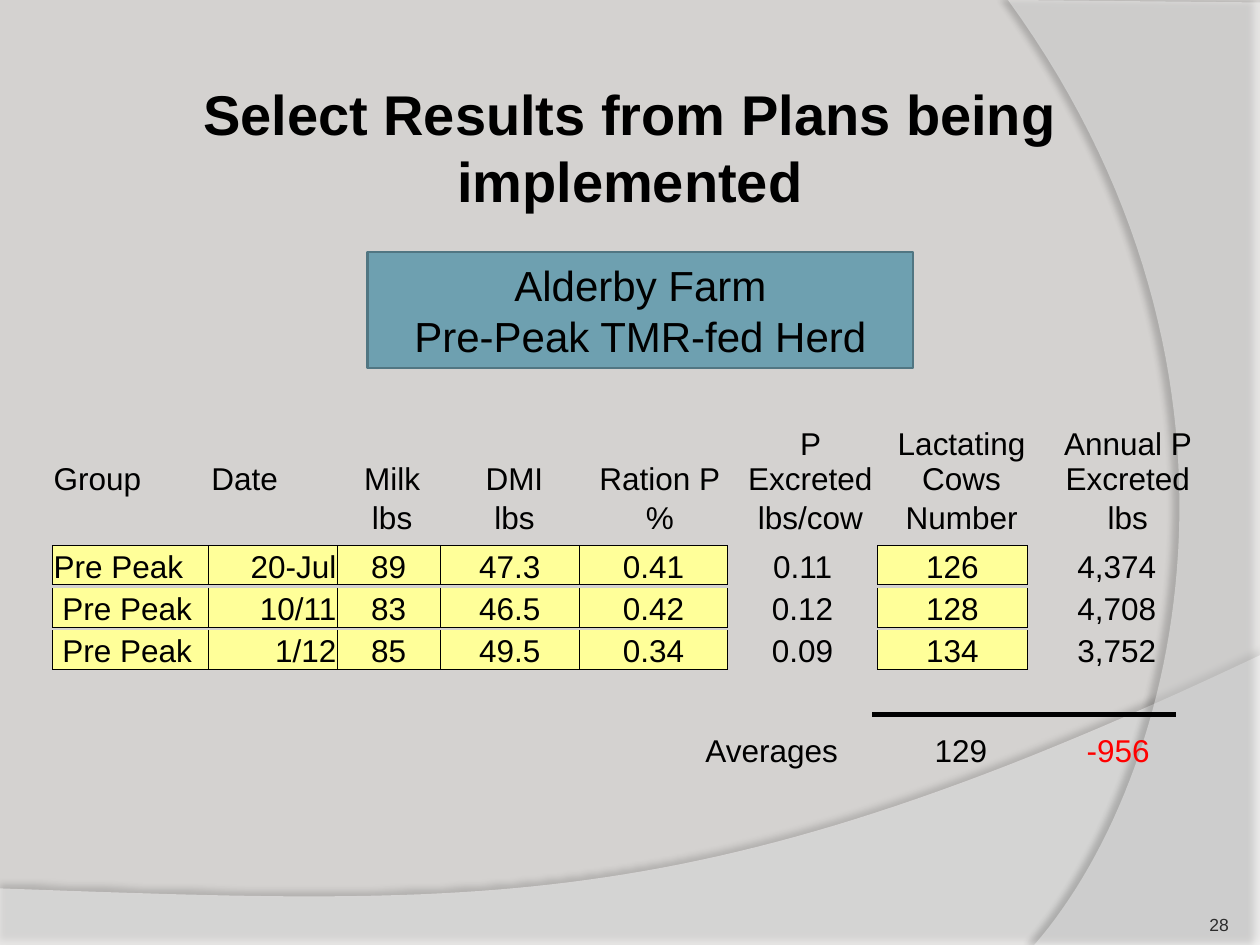
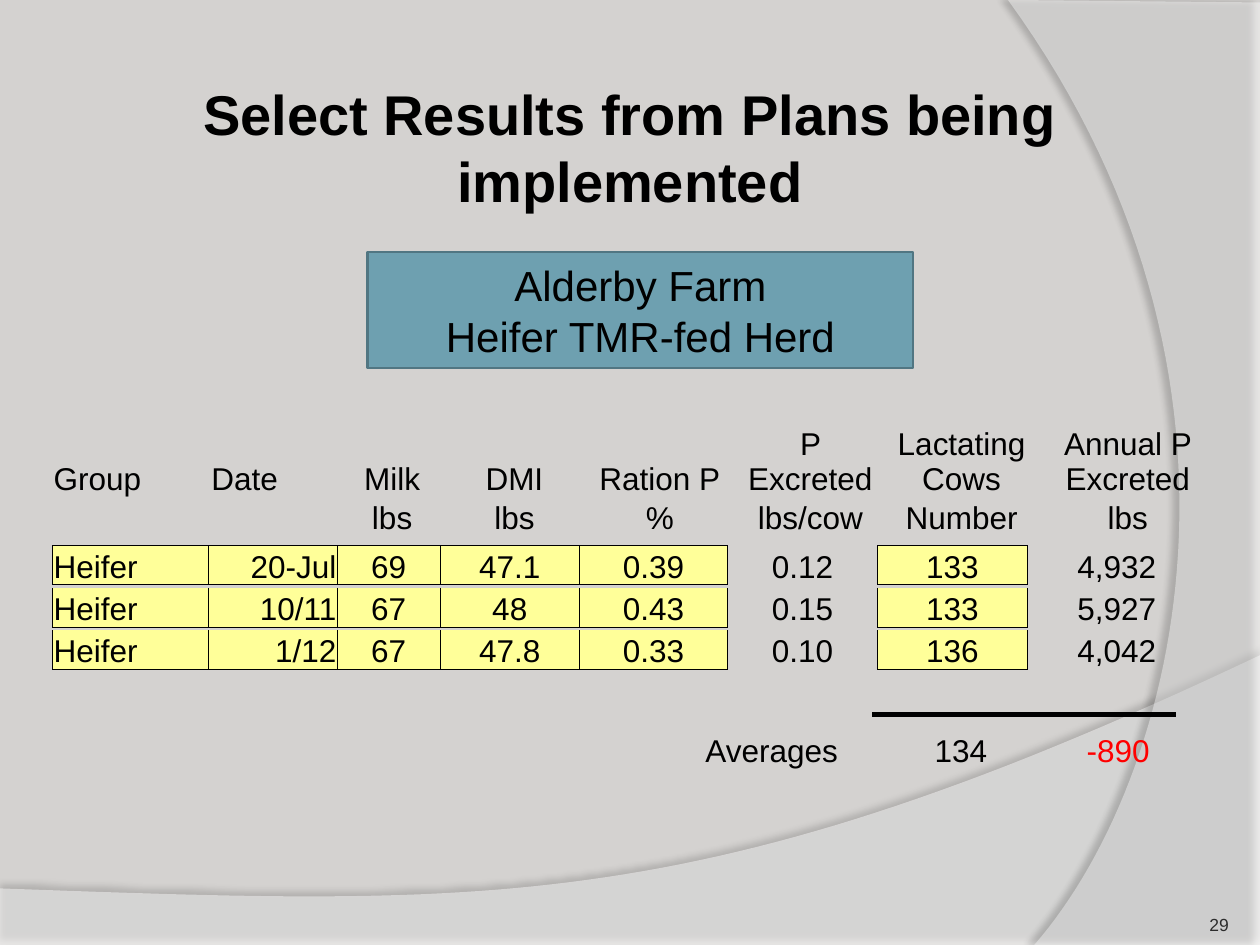
from lxml import etree
from pptx import Presentation
from pptx.dml.color import RGBColor
from pptx.enum.shapes import MSO_CONNECTOR, MSO_SHAPE
from pptx.enum.text import MSO_ANCHOR, PP_ALIGN
from pptx.oxml.ns import qn
from pptx.util import Cm, Pt

LEFT, CENTER, RIGHT = PP_ALIGN.LEFT, PP_ALIGN.CENTER, PP_ALIGN.RIGHT
BOTTOM, MIDDLE = MSO_ANCHOR.BOTTOM, MSO_ANCHOR.MIDDLE
RECT, STRAIGHT = MSO_SHAPE.RECTANGLE, MSO_CONNECTOR.STRAIGHT

BACKGROUND = RGBColor(0xD4, 0xD2, 0xD0)
WHITE = RGBColor(0xFF, 0xFF, 0xFF)
BLACK = RGBColor(0, 0, 0)
RED = RGBColor(0xFF, 0, 0)
GRAY = RGBColor(0x2C, 0x2C, 0x2C)
TEAL = RGBColor(0x6E, 0xA0, 0xB0)
DARK_TEAL = RGBColor(0x51, 0x76, 0x82)
YELLOW = RGBColor(0xFF, 0xFF, 0x99)
FONT = "Arial"

TITLE = "Select Results from Plans being implemented"
FARM = "Alderby Farm"
HEADER = [
    ["Group", "Date", "Milk", "DMI", "Ration P", "P Excreted",
     "Lactating Cows", "Annual P Excreted"],
    ["", "", "lbs", "lbs", "%", "lbs/cow", "Number", "lbs"],
]
HEADER_ALIGN = [LEFT, LEFT] + [CENTER] * 6
BODY_ALIGN = [LEFT, RIGHT] + [CENTER] * 6
COLUMN_WIDTHS = [3.18, 2.62, 2.09, 2.84, 3.02, 3.05, 3.05, 3.65]
CALCULATED = (5, 7)  # columns without a yellow box
BODY_TOP, BODY_PITCH = 11, 0.85

HERDS = [
    {"number": "28", "herd": "Pre-Peak TMR-fed Herd", "cows": "129", "change": "-956",
     "rows": [
         ["Pre Peak", "20-Jul", "89", "47.3", "0.41", "0.11", "126", "4,374"],
         [" Pre Peak", "10/11", "83", "46.5", "0.42", "0.12", "128", "4,708"],
         [" Pre Peak", "1/12", "85", "49.5", "0.34", "0.09", "134", "3,752"]]},
    {"number": "29", "herd": "Heifer TMR-fed Herd", "cows": "134", "change": "-890",
     "rows": [
         ["Heifer", "20-Jul", "69", "47.1", "0.39", "0.12", "133", "4,932"],
         ["Heifer", "10/11", "67", "48", "0.43", "0.15", "133", "5,927"],
         ["Heifer", "1/12", "67", "47.8", "0.33", "0.10", "136", "4,042"]]},
]

# corners, Bezier controls, end of curve, opacity, shadow opacity, distance, direction
BANDS = [
    ([(0, 17.91), (0, 19.05), (25.4, 19.05), (25.4, 13.21)],
     [(14.2, 18.52), (9.93, 18.26), (0, 17.91)], 45, 35, 3.5, 270),
    ([(25.4, 0.05), (25.4, 19.05), (20.85, 19.05)],
     [(23.75, 15.72), (25.86, 7.62), (20.32, 0)], 40, 45, 4, 180),
]
CURVE_STEPS = 60


def write_text(tf, lines, size, align=LEFT, color=BLACK, bold=False):
    tf.word_wrap = True
    for i, line in enumerate(lines):
        p = tf.paragraphs[0] if i == 0 else tf.add_paragraph()
        p.alignment = align
        p.font.size = Pt(size)
        if line:
            r = p.add_run()
            r.text = line
            r.font.name = FONT
            r.font.size = Pt(size)
            r.font.bold = bold
            r.font.color.rgb = color


def add_band(slide, z, corners, curve, opacity, shadow_opacity, distance, direction):
    """Add a translucent curved band with a soft shadow, behind the content."""
    bezier = [corners[-1]] + curve
    points = list(corners)
    for step in range(1, CURVE_STEPS + 1):
        t = step / CURVE_STEPS
        weights = ((1 - t) ** 3, 3 * t * (1 - t) ** 2, 3 * t * t * (1 - t), t ** 3)
        points.append([sum(w * pt[axis] for w, pt in zip(weights, bezier))
                       for axis in (0, 1)])
    emu = [(Cm(x), Cm(y)) for x, y in points]
    builder = slide.shapes.build_freeform(*emu[0])
    builder.add_line_segments(emu[1:], close=True)
    sp = builder.convert_to_shape()
    sp.fill.solid()
    sp.fill.fore_color.rgb = WHITE
    sp.line.fill.background()
    sp.shadow.inherit = False
    sp_pr = sp.element.spPr
    color = sp_pr.find(qn("a:solidFill"))[0]
    etree.SubElement(color, qn("a:alpha"), val=str(opacity * 1000))
    shadow = etree.SubElement(
        sp_pr.find(qn("a:effectLst")), qn("a:outerShdw"), blurRad=str(Pt(4)),
        dist=str(Pt(distance)), dir=str(direction * 60000), algn="ctr", rotWithShape="0")
    color = etree.SubElement(shadow, qn("a:srgbClr"), val=str(BLACK))
    etree.SubElement(color, qn("a:alpha"), val=str(shadow_opacity * 1000))
    slide.shapes.element.insert(z, sp.element)


prs = Presentation()
prs.slide_width, prs.slide_height = Cm(25.4), Cm(19.05)
fill = prs.slide_master.background.fill
fill.solid()
fill.fore_color.rgb = BACKGROUND

for herd in HERDS:
    slide = prs.slides.add_slide(prs.slide_layouts[5])
    for z, band in enumerate(BANDS, start=2):
        add_band(slide, z, *band)

    title = slide.shapes.title
    title.left, title.top, title.width, title.height = Cm(0.85), Cm(1.46), Cm(23.7), Cm(3)
    title.text_frame.vertical_anchor = MIDDLE
    write_text(title.text_frame, [TITLE], 32, CENTER, bold=True)

    sp = slide.shapes.add_shape(RECT, Cm(7.41), Cm(5.08), Cm(11), Cm(2.34))
    sp.shadow.inherit = False
    sp.fill.solid()
    sp.fill.fore_color.rgb = TEAL
    sp.line.color.rgb = DARK_TEAL
    sp.line.width = Pt(1.5)
    sp.text_frame.vertical_anchor = MIDDLE
    write_text(sp.text_frame, [FARM, herd["herd"]], 24, CENTER)

    # One table for the header, then one for each dated row
    tables = [(HEADER, 8.46, [1.56, 0.78], 1, HEADER_ALIGN)]
    for i, row in enumerate(herd["rows"]):
        tables.append(([row], BODY_TOP + i * BODY_PITCH, [0.79], 0.99, BODY_ALIGN))

    for t, (rows, top, heights, scale, aligns) in enumerate(tables):
        is_body = t > 0
        widths = [Cm(w * scale) for w in COLUMN_WIDTHS]
        table = slide.shapes.add_table(len(rows), len(widths), Cm(1.06), Cm(top),
                                       sum(widths), Cm(sum(heights))).table
        table.first_row = table.horz_banding = False
        for column, width in zip(table.columns, widths):
            column.width = width
        for r_index, (values, height) in enumerate(zip(rows, heights)):
            table.rows[r_index].height = Cm(height)
            for c, value in enumerate(values):
                cell = table.cell(r_index, c)
                cell.margin_left = cell.margin_right = cell.margin_top = Cm(0.02)
                cell.margin_bottom = 0
                cell.vertical_anchor = BOTTOM
                write_text(cell.text_frame, [value], 18, aligns[c])

                boxed = is_body and c not in CALCULATED
                borders = {"L": is_body, "R": is_body and c != 7,
                           "T": boxed and t == 1, "B": boxed}
                tc_pr = cell._tc.get_or_add_tcPr()
                for side, visible in borders.items():
                    ln = etree.SubElement(tc_pr, qn(f"a:ln{side}"), w=str(Pt(0.5)))
                    if visible:
                        solid = etree.SubElement(ln, qn("a:solidFill"))
                        etree.SubElement(solid, qn("a:srgbClr"), val=str(BLACK))
                    else:
                        etree.SubElement(ln, qn("a:noFill"))
                if boxed:
                    cell.fill.solid()
                    cell.fill.fore_color.rgb = YELLOW
                else:
                    cell.fill.background()

    rule = slide.shapes.add_connector(STRAIGHT, Cm(17.58), Cm(14.4), Cm(23.7), Cm(14.4))
    rule.line.color.rgb = BLACK
    rule.line.width = Pt(2.5)
    etree.SubElement(rule.element.spPr, qn("a:effectLst"))

    for left, text, align, color in [(13.97, "Averages", LEFT, BLACK),
                                     (17.57, herd["cows"], CENTER, BLACK),
                                     (20.74, herd["change"], CENTER, RED)]:
        tb = slide.shapes.add_textbox(Cm(left), Cm(14.61), Cm(3.6), Cm(1.02))
        write_text(tb.text_frame, [text], 18, align, color)

    tb = slide.shapes.add_textbox(Cm(22.65), Cm(17.83), Cm(2.12), Cm(1.02))
    tf = tb.text_frame
    tf.margin_left = tf.margin_right = tf.margin_top = tf.margin_bottom = 0
    tf.vertical_anchor = BOTTOM
    write_text(tf, [herd["number"]], 10, RIGHT, GRAY)

prs.save("out.pptx")
